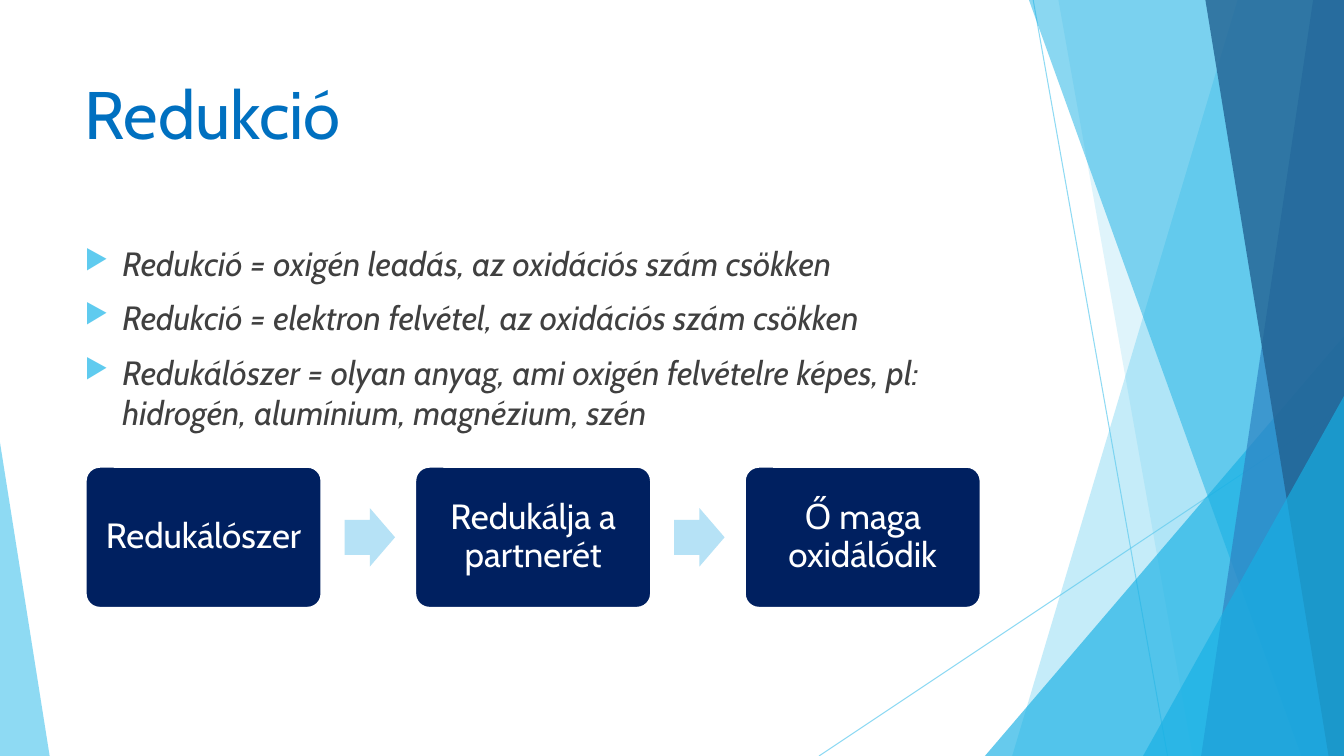
from lxml import etree
from pptx import Presentation
from pptx.dml.color import RGBColor
from pptx.enum.shapes import MSO_CONNECTOR, MSO_SHAPE
from pptx.enum.text import MSO_ANCHOR, PP_ALIGN
from pptx.oxml.ns import qn
from pptx.util import Pt

COLORS = {
    "sky": "5FCBEF", "azure": "17B0E4", "blue": "2E83C3", "deep": "226292",
    "title": "0070C0", "body": "404040", "navy": "002060", "pale": "B6E2F6",
    "white": "FFFFFF",
}
FONT = "Cabin"
WIDTH, HEIGHT = 960, 540


def paint(fill, color, opacity=100):
    fill.solid()
    fill.fore_color.rgb = RGBColor.from_string(COLORS[color])
    if opacity < 100:
        clr = fill._xPr.find(qn("a:solidFill"))[0]
        etree.SubElement(clr, qn("a:alpha"), val=str(opacity * 1000))


def write(paragraph, text, size, color, italic=None):
    run = paragraph.add_run()
    run.text = text
    run.font.name = FONT
    run.font.size = Pt(size)
    run.font.italic = italic
    run.font.color.rgb = RGBColor.from_string(COLORS[color])


prs = Presentation()
prs.slide_width, prs.slide_height = Pt(WIDTH), Pt(HEIGHT)
slide = prs.slides.add_slide(prs.slide_layouts[6])
shapes = slide.shapes

# Thin lines behind the facets
for x1, y1, x2, y2 in [(738, 0, 834, HEIGHT), (WIDTH, 290, 585, HEIGHT)]:
    ray = shapes.add_connector(MSO_CONNECTOR.STRAIGHT, Pt(x1), Pt(y1), Pt(x2), Pt(y2))
    ray.line.width = Pt(0.75)
    paint(ray.line.fill, "sky", 70)
    etree.SubElement(ray._element.spPr, qn("a:effectLst"))

# Facets: left edge at top and bottom; triangles: left, top, right, tip position
decor = [
    ("facet", (884, 723), "sky", 36),
    ("facet", (756, 852), "sky", 20),
    ("triangle", (703.5, 240, WIDTH, 1), "azure", 66),
    ("facet", (735, 929.5), "azure", 50),
    ("facet", (938, 858), "blue", 70),
    ("facet", (861, 949), "deep", 80),
    ("triangle", (816.5, 283, WIDTH, 1), "azure", 66),
    ("triangle", (0, 316, 35.5, 0), "sky", 70),
]
for kind, geometry, color, opacity in decor:
    if kind == "facet":
        top_x, bottom_x = geometry
        outline = shapes.build_freeform(Pt(top_x), 0, scale=1.0)
        outline.add_line_segments(
            [(Pt(WIDTH), 0), (Pt(WIDTH), Pt(HEIGHT)), (Pt(bottom_x), Pt(HEIGHT))])
        facet = outline.convert_to_shape()
    else:
        left, top, right, tip = geometry
        facet = shapes.add_shape(MSO_SHAPE.ISOSCELES_TRIANGLE, Pt(left), Pt(top),
                                 Pt(right - left), Pt(HEIGHT - top))
        facet.adjustments[0] = tip
    paint(facet.fill, color, opacity)
    facet.line.fill.background()
    facet.shadow.inherit = False

# Title
title = shapes.add_textbox(Pt(53.3), Pt(48), Pt(677), Pt(104)).text_frame
title.word_wrap = True
write(title.paragraphs[0], "Redukció", 48, "title")

# Bulleted definitions
definitions = [
    "Redukció = oxigén leadás, az oxidációs szám csökken",
    "Redukció = elektron felvétel, az oxidációs szám csökken",
    "Redukálószer = olyan anyag, ami oxigén felvételre képes, pl: "
    "hidrogén, alumínium, magnézium, szén",
]
body = shapes.add_textbox(Pt(53.3), Pt(170), Pt(677), Pt(305)).text_frame
body.word_wrap = True
for i, definition in enumerate(definitions):
    paragraph = body.add_paragraph() if i else body.paragraphs[0]
    paragraph.space_before = Pt(10)
    write(paragraph, definition, 24, "body", italic=True)
    props = paragraph._p.get_or_add_pPr()
    props.set("marL", str(Pt(27)))
    props.set("indent", str(Pt(-27)))
    bullet_color = etree.SubElement(props, qn("a:buClr"))
    etree.SubElement(bullet_color, qn("a:srgbClr"), val=COLORS["sky"])
    etree.SubElement(props, qn("a:buSzPct"), val="80000")
    etree.SubElement(props, qn("a:buChar"), char="▶")

# Process steps with arrows between them
steps = ["Redukálószer", "Redukálja a partnerét", "Ő maga oxidálódik"]
for i, step in enumerate(steps):
    left = 61.2 + 235.4 * i
    if i:
        arrow = shapes.add_shape(MSO_SHAPE.RIGHT_ARROW, Pt(left - 50.4), Pt(362.9),
                                 Pt(36), Pt(41.8))
        arrow.adjustments[0] = 0.6
        paint(arrow.fill, "pale")
        arrow.line.fill.background()
        arrow.shadow.inherit = False
    box = shapes.add_shape(MSO_SHAPE.ROUNDED_RECTANGLE, Pt(left), Pt(333.4),
                           Pt(168.5), Pt(100.8))
    box.adjustments[0] = 0.1
    paint(box.fill, "navy")
    paint(box.line.fill, "white")
    box.line.width = Pt(1.5)
    box.shadow.inherit = False
    label = box.text_frame
    label.word_wrap = True
    label.vertical_anchor = MSO_ANCHOR.MIDDLE
    label.margin_left = label.margin_right = Pt(7.2)
    label.margin_top = label.margin_bottom = Pt(7.2)
    paragraph = label.paragraphs[0]
    paragraph.alignment = PP_ALIGN.CENTER
    paragraph.line_spacing = 0.9
    write(paragraph, step, 25, "white")

prs.save("out.pptx")
